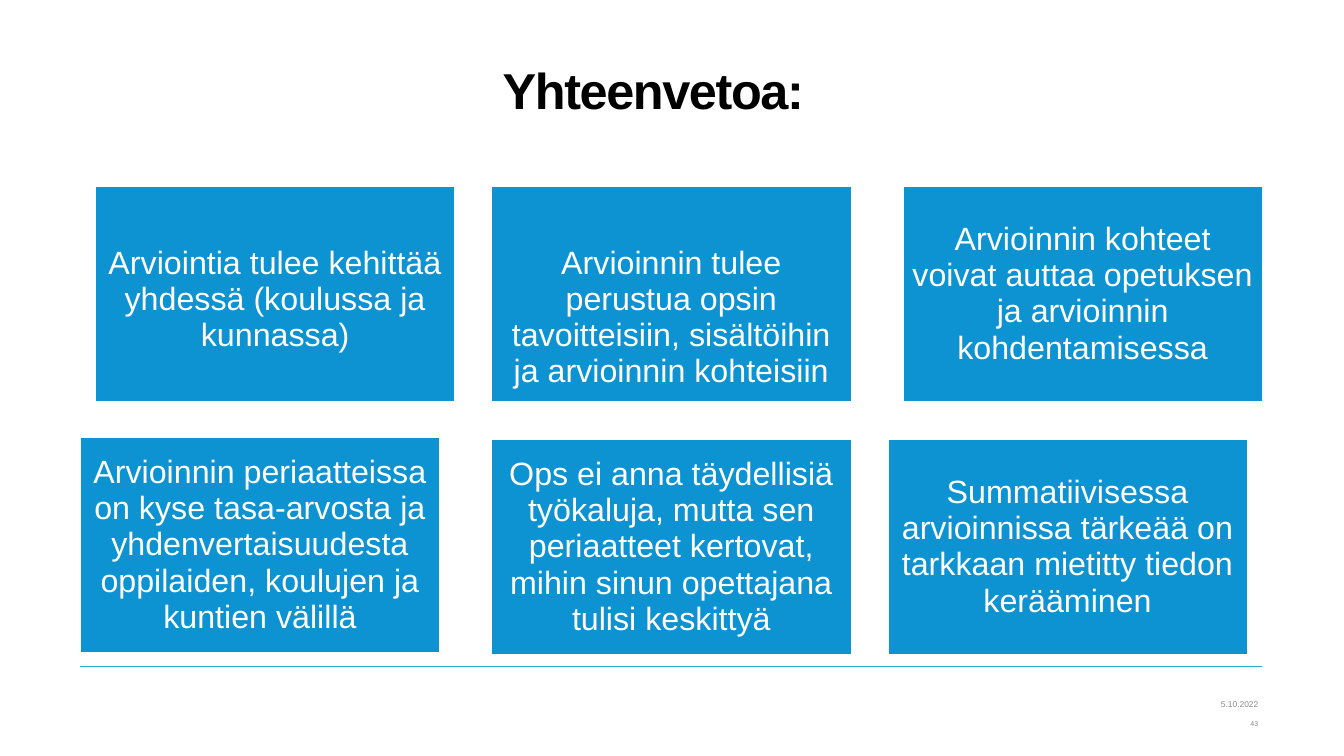
from lxml import etree
from pptx import Presentation
from pptx.dml.color import RGBColor
from pptx.enum.shapes import MSO_CONNECTOR, MSO_SHAPE
from pptx.enum.text import MSO_ANCHOR, PP_ALIGN
from pptx.oxml.ns import qn
from pptx.util import Inches, Pt

COLORS = {"blue": "0D93D2", "rule": "28A7DA", "white": "FFFFFF",
          "black": "000000", "gray": "8C8C8C"}
CARD_WIDTH, CARD_HEIGHT = 3.58, 2.15
LOW_TEXT = 0.59  # top inset of the cards whose text starts lower

# left, top, top inset (None: text in the middle), text
CARDS = [
    (0.94, 1.84, LOW_TEXT, "Arviointia tulee kehittää yhdessä (koulussa ja kunnassa)"),
    (4.87, 1.84, LOW_TEXT, "Arvioinnin tulee perustua opsin tavoitteisiin, "
                           "sisältöihin ja arvioinnin kohteisiin"),
    (8.95, 1.84, None, "Arvioinnin kohteet voivat auttaa opetuksen ja arvioinnin "
                       "kohdentamisessa"),
    (0.79, 4.33, None, "Arvioinnin periaatteissa on kyse tasa-arvosta ja "
                       "yhdenvertaisuudesta oppilaiden, koulujen ja kuntien välillä"),
    (4.87, 4.35, None, "Ops ei anna täydellisiä työkaluja, mutta sen periaatteet "
                       "kertovat, mihin sinun opettajana tulisi keskittyä"),
    (8.8, 4.35, None, "Summatiivisessa arvioinnissa tärkeää on tarkkaan mietitty "
                      "tiedon kerääminen"),
]


def rgb(name):
    return RGBColor.from_string(COLORS[name])


def write_text(shape, text, *, size, color, align=PP_ALIGN.CENTER,
               anchor=MSO_ANCHOR.MIDDLE, insets=(0.1, 0.1, 0.1, 0.1),
               line_spacing=0.9, bold=False, tracking=None):
    """Insets are left, top, right, bottom in inches; tracking is in points."""
    frame = shape.text_frame
    frame.word_wrap = True
    frame.vertical_anchor = anchor
    (frame.margin_left, frame.margin_top,
     frame.margin_right, frame.margin_bottom) = map(Inches, insets)
    paragraph = frame.paragraphs[0]
    paragraph.alignment = align
    paragraph.line_spacing = line_spacing
    run = paragraph.add_run()
    run.text = text
    font = run.font
    font.name, font.size, font.bold = "Arial", Pt(size), bold
    font.color.rgb = rgb(color)
    if tracking is not None:
        font._element.set("spc", str(tracking * 100))


def add_label(slide, left, top, width, height, text, **text_format):
    label = slide.shapes.add_textbox(*map(Inches, (left, top, width, height)))
    write_text(label, text, **text_format)


def add_card(slide, left, top, top_inset, text):
    card = slide.shapes.add_shape(
        MSO_SHAPE.RECTANGLE,
        *map(Inches, (left, top, CARD_WIDTH, CARD_HEIGHT)))
    card.shadow.inherit = False
    card.fill.solid()
    card.fill.fore_color.rgb = rgb("blue")
    card.line.color.rgb = rgb("white")
    card.line.width = Pt(2)
    write_text(card, text, size=23, color="white", line_spacing=0.94,
               anchor=MSO_ANCHOR.TOP if top_inset else MSO_ANCHOR.MIDDLE,
               insets=(0.1, top_inset or 0.1, 0.1, 0.1))


def add_rule(slide, left, right, y):
    rule = slide.shapes.add_connector(
        MSO_CONNECTOR.STRAIGHT, *map(Inches, (left, y, right, y)))
    rule.line.color.rgb = rgb("rule")
    rule.line.width = Pt(1)
    etree.SubElement(rule._element.spPr, qn("a:effectLst"))


def main():
    presentation = Presentation()
    presentation.slide_width = Inches(13.33)
    presentation.slide_height = Inches(7.5)
    slide = presentation.slides.add_slide(presentation.slide_layouts[6])

    add_rule(slide, 0.79, 12.52, 6.61)
    add_label(slide, 0.75, 0.68, 11.46, 1.31, "Yhteenvetoa:", size=36,
              color="black", bold=True, tracking=-1, line_spacing=0.85,
              anchor=MSO_ANCHOR.TOP, insets=(0, 0, 0, 0))
    footer = {"color": "gray", "align": PP_ALIGN.RIGHT,
              "insets": (0.1, 0.05, 0, 0.05)}
    add_label(slide, 7.2, 6.89, 5.28, 0.2, "5.10.2022", size=6, **footer)
    add_label(slide, 7.2, 7.09, 5.28, 0.18, "43", size=5, **footer)
    for card in CARDS:
        add_card(slide, *card)

    presentation.save("out.pptx")


if __name__ == "__main__":
    main()
